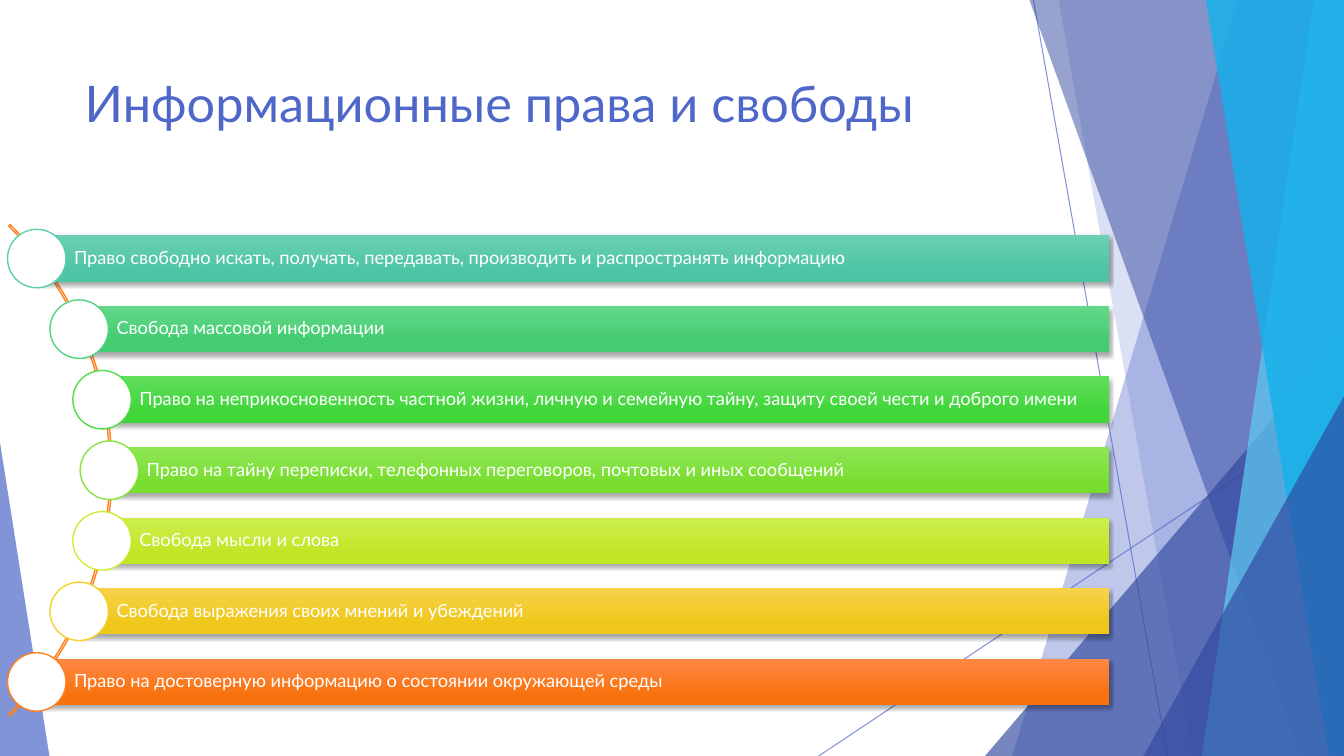
from math import sqrt

from lxml import etree
from pptx import Presentation
from pptx.dml.color import RGBColor
from pptx.enum.shapes import MSO_CONNECTOR, MSO_SHAPE
from pptx.enum.text import MSO_ANCHOR, PP_ALIGN
from pptx.oxml.ns import qn
from pptx.util import Inches, Pt

STRAIGHT = MSO_CONNECTOR.STRAIGHT
RECTANGLE, OVAL = MSO_SHAPE.RECTANGLE, MSO_SHAPE.OVAL
TRIANGLE, BLOCK_ARC = MSO_SHAPE.ISOSCELES_TRIANGLE, MSO_SHAPE.BLOCK_ARC
TOP, MIDDLE, LEFT = MSO_ANCHOR.TOP, MSO_ANCHOR.MIDDLE, PP_ALIGN.LEFT

WIDTH, HEIGHT = 13.33, 7.5
FONT = "Lato"
BLUE, NAVY, WHITE, ORANGE = "4E67C8", "31489F", "FFFFFF", "FF8021"

RIGHTS = [
    ("Право свободно искать, получать, передавать, производить и распространять информацию",
     "6BD0B3", "4DC4A4", "5DCEAF"),
    ("Свобода массовой информации", "63D888", "43CC72", "53D680"),
    ("Право на неприкосновенность частной жизни, личную и семейную тайну, "
     "защиту своей чести и доброго имени", "60DF5C", "40D539", "50DE4A"),
    ("Право на тайну переписки, телефонных переговоров, почтовых и иных сообщений",
     "8EE755", "79DD2F", "86E640"),
    ("Свобода мысли и слова", "CDEF4E", "C1E625", "CAEE36"),
    ("Свобода выражения своих мнений и убеждений", "F7D249", "EFC71A", "F6D02B"),
    ("Право на достоверную информацию о состоянии окружающей среды",
     "FF8845", "F87310", ORANGE),
]


def color(value):
    """Return the colour for a hex string."""
    return RGBColor.from_string(value)


def set_alpha(fill_element, percent):
    """Make the solid colour inside an element partly transparent."""
    rgb = fill_element.find(".//" + qn("a:srgbClr"))
    etree.SubElement(rgb, qn("a:alpha"), val=str(percent * 1000))


def fill_flat(shape, fill, alpha):
    """Give a shape a transparent fill with no outline or shadow."""
    shape.shadow.inherit = False
    shape.fill.solid()
    shape.fill.fore_color.rgb = color(fill)
    set_alpha(shape._element.spPr.find(qn("a:solidFill")), alpha)
    shape.line.fill.background()


def add_shape(slide, kind, left, top, width, height):
    """Add a preset shape without shadow, measured in inches."""
    shape = slide.shapes.add_shape(
        kind, Inches(left), Inches(top), Inches(width), Inches(height))
    shape.shadow.inherit = False
    return shape


def add_shadow(shape):
    """Add a soft shadow below a shape."""
    effects = shape._element.spPr.find(qn("a:effectLst"))
    shadow = etree.SubElement(
        effects, qn("a:outerShdw"), blurRad=str(Pt(3)), dist=str(Pt(2)),
        dir="5400000", rotWithShape="0")
    black = etree.SubElement(shadow, qn("a:srgbClr"), val="000000")
    etree.SubElement(black, qn("a:alpha"), val="35000")


def write_text(frame, text, size, font_color, anchor, spacing=1.0):
    """Write one left-aligned paragraph into a text frame."""
    frame.word_wrap = True
    frame.vertical_anchor = anchor
    paragraph = frame.paragraphs[0]
    paragraph.alignment = LEFT
    paragraph.line_spacing = spacing
    run = paragraph.add_run()
    run.text = text
    run.font.name = FONT
    run.font.size = Pt(size)
    run.font.color.rgb = color(font_color)


def add_thin_line(slide, start_x, start_y, end_x, end_y):
    """Add a thin translucent line."""
    line = slide.shapes.add_connector(
        STRAIGHT, Inches(start_x), Inches(start_y), Inches(end_x), Inches(end_y))
    line.line.color.rgb = color(BLUE)
    line.line.width = Pt(0.75)
    set_alpha(line.line._ln, 70)
    etree.SubElement(line._element.spPr, qn("a:effectLst"))


def add_band(slide, top_x, bottom_x, fill, alpha):
    """Add a full-height band from a slanted left edge to the slide's right edge."""
    builder = slide.shapes.build_freeform(Inches(top_x), 0, scale=1.0)
    corners = [(WIDTH, 0), (WIDTH, HEIGHT), (bottom_x, HEIGHT)]
    builder.add_line_segments([(Inches(x), Inches(y)) for x, y in corners], close=True)
    fill_flat(builder.convert_to_shape(), fill, alpha)


def add_corner(slide, left, top, width, peak, fill, alpha):
    """Add a right triangle standing on the slide's bottom edge."""
    triangle = add_shape(slide, TRIANGLE, left, top, width, HEIGHT - top)
    triangle.adjustments[0] = peak
    fill_flat(triangle, fill, alpha)


def add_backdrop(slide):
    """Draw the faceted decoration along the slide's edges."""
    add_thin_line(slide, 10.25, 0, 11.58, HEIGHT)
    add_thin_line(slide, WIDTH, 4.03, 8.12, HEIGHT)
    add_band(slide, 12.28, 10.04, BLUE, 36)
    add_band(slide, 10.5, 11.83, BLUE, 20)
    add_corner(slide, 9.77, 3.33, 3.56, 1, NAVY, 66)
    add_band(slide, 10.21, 12.91, NAVY, 50)
    add_band(slide, 13.03, 11.92, "5ECCF3", 70)
    add_band(slide, 11.96, 13.18, "12B2EB", 80)
    add_corner(slide, 11.34, 3.93, 1.99, 1, NAVY, 66)
    add_corner(slide, 0, 4.39, 0.49, 0, BLUE, 70)


def add_title(slide, text, left, top, width, height):
    """Place and fill the title placeholder."""
    title = slide.shapes.title
    title.left, title.top = Inches(left), Inches(top)
    title.width, title.height = Inches(width), Inches(height)
    write_text(title.text_frame, text, 36, BLUE, TOP)


def add_right(slide, text, left, middle, right, top_color, bottom_color, ring_color):
    """Draw one gradient bar with its circle centred on the bar's left end."""
    height, diameter = 0.46, 0.58
    bar = add_shape(slide, RECTANGLE, left, middle - height / 2, right - left, height)
    bar.line.fill.background()
    bar.fill.gradient()
    bar.fill.gradient_angle = 270
    stops = zip(bar.fill.gradient_stops, (0, 0.78), (top_color, bottom_color))
    for stop, position, stop_color in stops:
        stop.position = position
        stop.color.rgb = color(stop_color)
    add_shadow(bar)
    frame = bar.text_frame
    frame.margin_left = Inches(0.37)
    frame.margin_top = frame.margin_right = frame.margin_bottom = Inches(0.04)
    write_text(frame, text, 13, WHITE, MIDDLE, spacing=0.9)

    circle = add_shape(
        slide, OVAL, left - diameter / 2, middle - diameter / 2, diameter, diameter)
    circle.fill.solid()
    circle.fill.fore_color.rgb = color(WHITE)
    circle.line.color.rgb = color(ring_color)
    circle.line.width = Pt(1)


def add_rights_list(slide, left, top, diameter, right):
    """Draw the curve and the bars whose circles follow it."""
    pitch, radius = 0.7, 3.42
    center_x, center_y = left + diameter / 2, top + diameter / 2
    arc = add_shape(slide, BLOCK_ARC, left, top, diameter, diameter)
    for index, value in enumerate((189, 27, 0.003)):
        arc.adjustments[index] = value
    arc.fill.background()
    arc.line.color.rgb = color(ORANGE)
    arc.line.width = Pt(1)
    for index, (text, *colors) in enumerate(RIGHTS):
        offset = (index - (len(RIGHTS) - 1) / 2) * pitch
        bar_left = center_x + sqrt(radius ** 2 - offset ** 2)
        add_right(slide, text, bar_left, center_y + offset, right, *colors)


def main():
    """Build and save the slide."""
    presentation = Presentation()
    presentation.slide_width, presentation.slide_height = Inches(WIDTH), Inches(HEIGHT)
    slide = presentation.slides.add_slide(presentation.slide_layouts[5])
    add_backdrop(slide)
    add_title(slide, "Информационные права и свободы", 0.74, 0.67, 9.4, 1.44)
    add_rights_list(slide, -5.78, 1.22, 6.89, 11)
    presentation.save("out.pptx")


if __name__ == "__main__":
    main()
